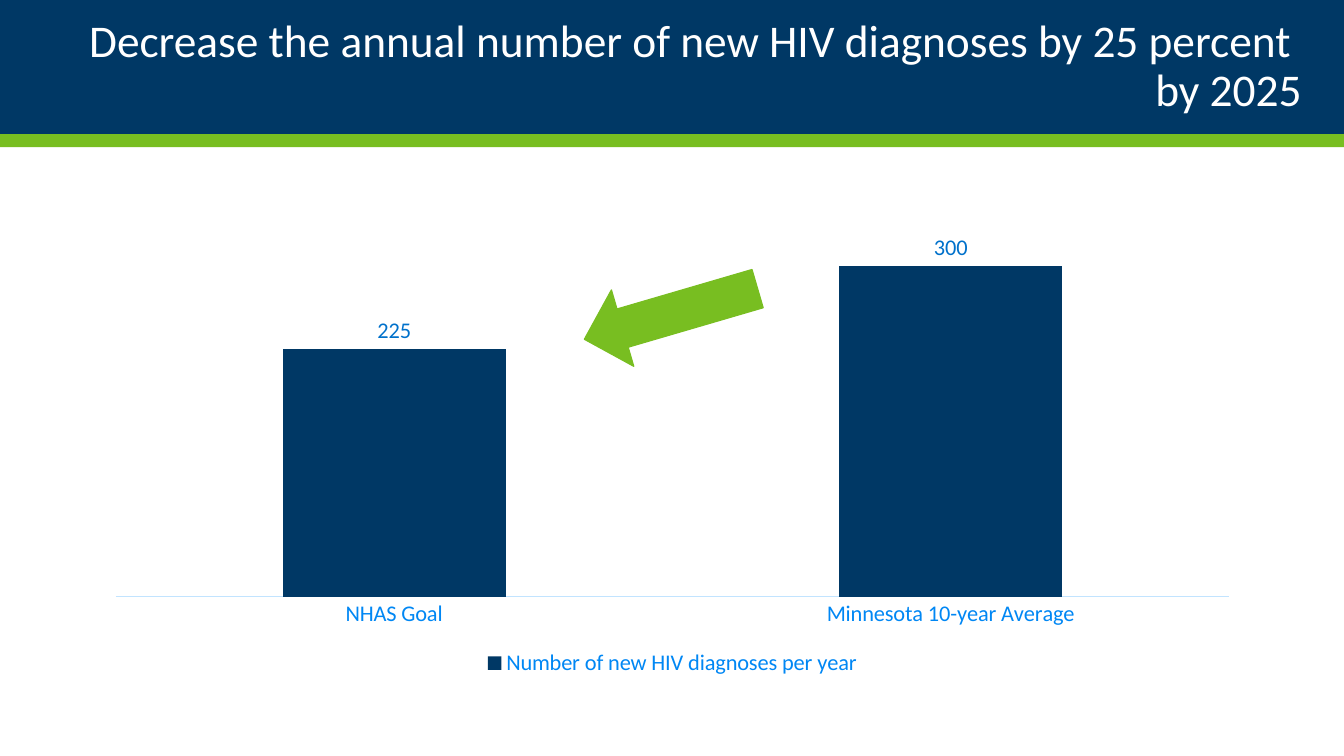
from pptx import Presentation
from pptx.chart.data import CategoryChartData
from pptx.dml.color import RGBColor
from pptx.enum import chart as charts, shapes, text
from pptx.util import Inches, Pt

FONT = "Calibri"
NAVY = "003865"
GREEN = "78BE21"
WHITE = "FFFFFF"
AXIS_BLUE = "0087F4"
LABEL_BLUE = "0071CB"
AXIS_LINE = "C2E4FF"


def rgb(hex_color):
    return RGBColor.from_string(hex_color)


def box(left, top, width, height):
    return [Inches(value) for value in (left, top, width, height)]


def style_font(font, size, color):
    font.name = FONT
    font.size = Pt(size)
    font.color.rgb = rgb(color)


def add_filled_shape(slide, preset, place, color):
    shape = slide.shapes.add_shape(preset, *box(*place))
    shape.shadow.inherit = False
    shape.fill.solid()
    shape.fill.fore_color.rgb = rgb(color)
    shape.line.fill.background()
    return shape


def add_header_band(slide, top, height, color):
    band = add_filled_shape(slide, shapes.MSO_SHAPE.RECTANGLE,
                            (0, top, 13.33, height), color)
    # Bands lie behind the title
    slide.shapes.title.element.addprevious(band.element)


def fill_title(slide, wording):
    title = slide.shapes.title
    title.left, title.top, title.width, title.height = box(0.49, 0.17, 12.52, 1)
    frame = title.text_frame
    frame.text = wording
    frame.word_wrap = True
    frame.auto_size = text.MSO_AUTO_SIZE.NONE
    frame.vertical_anchor = text.MSO_ANCHOR.MIDDLE
    heading = frame.paragraphs[0]
    heading.alignment = text.PP_ALIGN.RIGHT
    heading.line_spacing = 0.9
    style_font(heading.font, 32.4, WHITE)


def add_diagnoses_chart(slide):
    data = CategoryChartData()
    data.categories = ["NHAS Goal", "Minnesota 10-year Average"]
    data.add_series("Number of new HIV diagnoses per year", (225, 300))
    chart = slide.shapes.add_chart(charts.XL_CHART_TYPE.COLUMN_CLUSTERED,
                                   *box(0.92, 2, 11.5, 4.76), data).chart
    chart.has_title = False
    style_font(chart.font, 10, NAVY)

    # Columns and their values
    columns = chart.plots[0]
    columns.gap_width = 150
    columns.overlap = -27
    columns.vary_by_categories = False
    diagnoses = columns.series[0]
    diagnoses.format.fill.solid()
    diagnoses.format.fill.fore_color.rgb = rgb(NAVY)
    labels = diagnoses.data_labels
    labels.show_value = True
    labels.position = charts.XL_LABEL_POSITION.OUTSIDE_END
    style_font(labels.font, 16, LABEL_BLUE)

    # Axes
    categories = chart.category_axis
    categories.major_tick_mark = charts.XL_TICK_MARK.NONE
    categories.format.line.color.rgb = rgb(AXIS_LINE)
    categories.format.line.width = Pt(0.75)
    style_font(categories.tick_labels.font, 16, AXIS_BLUE)
    values = chart.value_axis
    values.minimum_scale = 0
    values.maximum_scale = 350
    values.has_major_gridlines = False
    values.visible = False

    # Legend
    chart.has_legend = True
    chart.legend.position = charts.XL_LEGEND_POSITION.BOTTOM
    chart.legend.include_in_layout = False
    style_font(chart.legend.font, 16, AXIS_BLUE)


def add_decrease_arrow(slide):
    arrow = add_filled_shape(slide, shapes.MSO_SHAPE.LEFT_ARROW,
                             (5.76, 2.72, 1.79, 0.79), GREEN)
    arrow.line.color.rgb = rgb(GREEN)
    arrow.line.width = Pt(0.85)
    arrow.rotation = 343.7


def main():
    deck = Presentation()
    deck.slide_width, deck.slide_height = Inches(13.33), Inches(7.5)
    slide = deck.slides.add_slide(deck.slide_layouts.get_by_name("Title Only"))

    # Header
    add_header_band(slide, 0, 1.33, NAVY)
    add_header_band(slide, 1.33, 0.13, GREEN)
    fill_title(slide, "Decrease the annual number of new HIV diagnoses "
                      "by 25 percent  by 2025")

    # Goal against average
    add_diagnoses_chart(slide)
    add_decrease_arrow(slide)

    deck.save("out.pptx")


if __name__ == "__main__":
    main()
